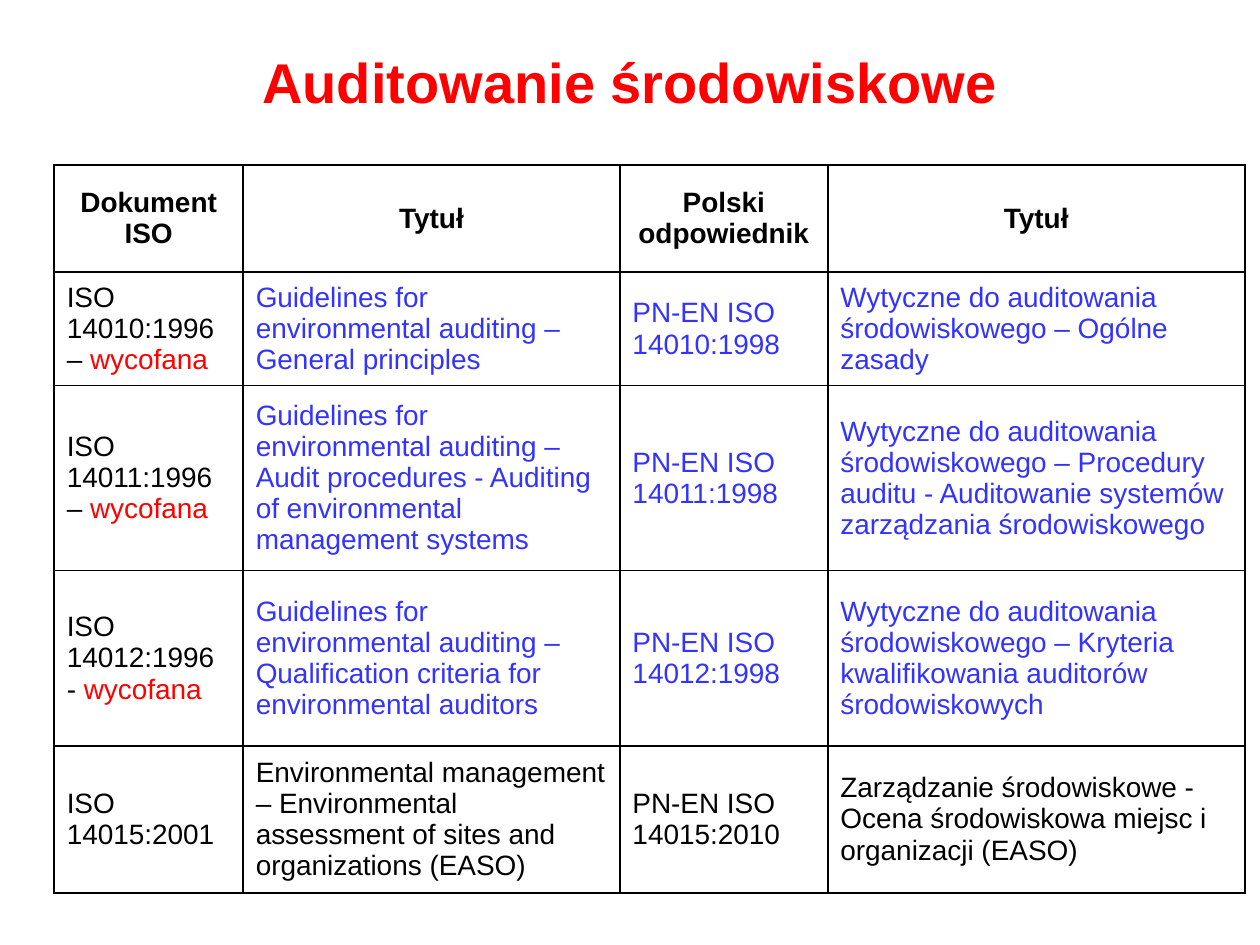
import pptx
import pptx.dml.color
import pptx.enum.text
import pptx.oxml
import pptx.oxml.ns
import pptx.util
from pptx.util import Inches

BLACK = pptx.dml.color.RGBColor(0x00, 0x00, 0x00)
RED = pptx.dml.color.RGBColor(0xFF, 0x00, 0x00)
BLUE = pptx.dml.color.RGBColor(0x33, 0x33, 0xFF)

FONT = "Arial"
TITLE_SIZE = 32
TABLE_SIZE = 16
BLANK_LAYOUT = 6
COLUMN_WIDTHS = (1.5, 2.99, 1.65, 3.31)
ROW_HEIGHTS = (0.85, 0.85, 1.47, 1.39, 1.1)

HEADERS = ("Dokument ISO", "Tytuł", "Polski odpowiednik", "Tytuł")
WITHDRAWN = "wycofana"
WITHDRAWN_STANDARDS = (
    ("ISO 14010:1996 – ",
     "Guidelines for environmental auditing – General principles",
     "PN-EN ISO 14010:1998",
     "Wytyczne do auditowania środowiskowego – Ogólne zasady"),
    ("ISO 14011:1996 – ",
     "Guidelines for environmental auditing – Audit procedures - "
     "Auditing of environmental management systems",
     "PN-EN ISO 14011:1998",
     "Wytyczne do auditowania środowiskowego – Procedury auditu - "
     "Auditowanie systemów zarządzania środowiskowego"),
    ("ISO 14012:1996 - ",
     "Guidelines for environmental auditing – Qualification criteria "
     "for environmental auditors",
     "PN-EN ISO 14012:1998",
     "Wytyczne do auditowania środowiskowego – Kryteria kwalifikowania "
     "auditorów środowiskowych"),
)
CURRENT_STANDARD = (
    "ISO 14015:2001",
    "Environmental management – Environmental assessment of sites and "
    "organizations (EASO)",
    "PN-EN ISO 14015:2010",
    "Zarządzanie środowiskowe - Ocena środowiskowa miejsc i "
    "organizacji (EASO)",
)


def add_run(paragraph, text, size, color, bold=False):
    run = paragraph.add_run()
    run.text = text
    run.font.name = FONT
    run.font.size = pptx.util.Pt(size)
    run.font.bold = bold
    run.font.color.rgb = color


def add_title(slide, text):
    box = slide.shapes.add_textbox(Inches(0.5), Inches(0.21), Inches(9), Inches(0.87))
    frame = box.text_frame
    frame.word_wrap = True
    frame.vertical_anchor = pptx.enum.text.MSO_ANCHOR.MIDDLE
    paragraph = frame.paragraphs[0]
    paragraph.alignment = pptx.enum.text.PP_ALIGN.CENTER
    add_run(paragraph, text, TITLE_SIZE, RED, bold=True)


def set_borders(cell, color, width):
    """Draw all four edges; they must precede the fill in the cell properties."""
    properties = cell._tc.get_or_add_tcPr()
    for index, edge in enumerate(("lnL", "lnR", "lnT", "lnB")):
        line = pptx.oxml.parse_xml(
            f'<a:{edge} {pptx.oxml.ns.nsdecls("a")} w="{pptx.util.Pt(width)}">'
            f'<a:solidFill><a:srgbClr val="{color}"/></a:solidFill></a:{edge}>')
        properties.insert(index, line)


def fill_cell(cell, runs, header=False):
    """Write (text, color) runs into a bordered, unfilled cell."""
    cell.fill.background()
    set_borders(cell, BLACK, 1)
    cell.vertical_anchor = pptx.enum.text.MSO_ANCHOR.MIDDLE
    paragraph = cell.text_frame.paragraphs[0]
    if header:
        paragraph.alignment = pptx.enum.text.PP_ALIGN.CENTER
    for text, color in runs:
        add_run(paragraph, text, TABLE_SIZE, color, bold=header)


def standards_rows():
    """Return the table as rows of cells, each cell a list of (text, color)."""
    rows = [[[(text, BLACK)] for text in HEADERS]]
    for number, *details in WITHDRAWN_STANDARDS:
        rows.append([[(number, BLACK), (WITHDRAWN, RED)]]
                    + [[(text, BLUE)] for text in details])
    rows.append([[(text, BLACK)] for text in CURRENT_STANDARD])
    return rows


def add_standards_table(slide):
    frame = slide.shapes.add_table(
        len(ROW_HEIGHTS), len(COLUMN_WIDTHS), Inches(0.43), Inches(1.31),
        Inches(sum(COLUMN_WIDTHS)), Inches(sum(ROW_HEIGHTS)))
    table = frame.table
    table.horz_banding = False
    for column, width in zip(table.columns, COLUMN_WIDTHS):
        column.width = Inches(width)
    for row, height in zip(table.rows, ROW_HEIGHTS):
        row.height = Inches(height)
    for row_index, cells in enumerate(standards_rows()):
        for column_index, runs in enumerate(cells):
            fill_cell(table.cell(row_index, column_index), runs,
                      header=row_index == 0)


def main():
    presentation = pptx.Presentation()
    presentation.slide_width = Inches(10)
    presentation.slide_height = Inches(7.5)
    slide = presentation.slides.add_slide(presentation.slide_layouts[BLANK_LAYOUT])
    add_title(slide, "Auditowanie środowiskowe")
    add_standards_table(slide)
    presentation.save("out.pptx")


if __name__ == "__main__":
    main()
